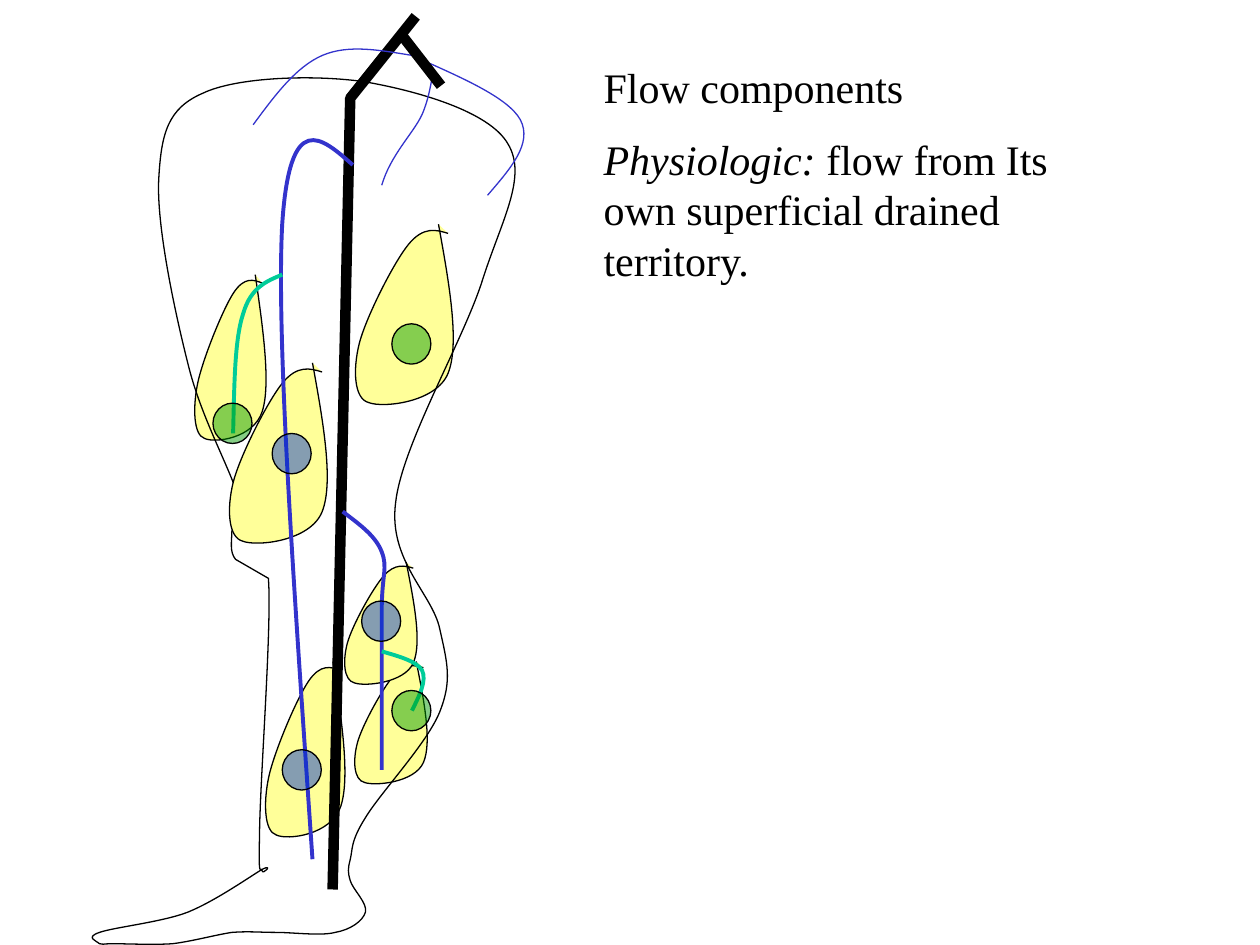
from dataclasses import dataclass

from lxml.etree import SubElement
from pptx import Presentation
from pptx.dml.color import RGBColor
from pptx.enum.shapes import MSO_CONNECTOR, MSO_SHAPE
from pptx.enum.text import MSO_ANCHOR, MSO_AUTO_SIZE, PP_ALIGN
from pptx.oxml.ns import qn
from pptx.util import Inches, Pt


@dataclass(frozen=True)
class Theme:
    font: str = "Times New Roman"
    size: float = 24
    ink: str = "000000"
    zone: str = "FFFF99"
    vein: str = "3333CC"
    branch: str = "00CC99"
    blue_dot: str = "0033CC"
    green_dot: str = "009900"
    dot_alpha: int = 48
    thin: float = 0.75
    medium: float = 2.25
    thick: float = 6


@dataclass(frozen=True)
class Curve:
    start: tuple[float, float]
    segments: list[tuple[float, ...]]
    color: str
    width: float
    fill: str | None = None
    closed: bool = False


@dataclass(frozen=True)
class Zone:
    left: float
    top: float
    width: float
    height: float


@dataclass(frozen=True)
class Dot:
    left: float
    top: float
    color: str


T = Theme()

ZONE_START = (0.8, 0)
ZONE_SEGMENTS = [
    (0.9, 0.32, 1, 0.65, 0.89, 0.81),
    (0.78, 0.97, 0.28, 1, 0.15, 0.97),
    (0.01, 0.95, 0, 0.79, 0.06, 0.65),
    (0.12, 0.51, 0.38, 0.21, 0.52, 0.11),
    (0.66, 0.01, 0.78, 0.03, 0.89, 0.05),
]
BACK_ZONES = [
    Zone(2.8, 5.25, 0.63, 0.99),
    Zone(2.72, 4.46, 0.63, 0.99),
    Zone(1.53, 2.18, 0.62, 1.34),
    Zone(2.8, 1.78, 0.85, 1.46),
]
FRONT_ZONES = [Zone(2.09, 5.25, 0.69, 1.42), Zone(1.8, 2.88, 0.85, 1.46)]

LEG = Curve((2.06, 6.63), [
    (2.06, 6.24, 2.16, 4.96, 2.13, 4.59),
    (1.87, 4.44),
    (1.82, 4.38, 1.84, 4.3, 1.84, 4.22),
    (1.9, 3.98),
    (1.85, 3.76, 1.61, 3.35, 1.5, 2.92),
    (1.39, 2.49, 1.24, 1.79, 1.26, 1.42),
    (1.28, 1.06, 1.33, 0.86, 1.61, 0.74),
    (1.88, 0.61, 2.5, 0.59, 2.9, 0.65),
    (3.3, 0.72, 3.88, 0.88, 4.03, 1.14),
    (4.19, 1.4, 3.98, 1.75, 3.83, 2.22),
    (3.68, 2.7, 3.19, 3.53, 3.14, 3.99),
    (3.08, 4.45, 3.43, 4.71, 3.49, 4.99),
    (3.55, 5.26, 3.59, 5.4, 3.49, 5.65),
    (3.39, 5.9, 3.02, 6.29, 2.9, 6.49),
    (2.78, 6.68, 2.8, 6.74, 2.78, 6.82),
    (2.76, 6.9, 2.76, 6.92, 2.78, 6.99),
    (2.8, 7.06, 2.92, 7.17, 2.9, 7.24),
    (2.88, 7.31, 2.78, 7.38, 2.66, 7.4),
    (2.55, 7.43, 2.33, 7.4, 2.19, 7.4),
    (2.06, 7.4, 1.98, 7.39, 1.84, 7.4),
    (1.71, 7.42, 1.53, 7.47, 1.37, 7.49),
    (1.22, 7.5, 1, 7.49, 0.9, 7.49),
    (0.81, 7.49, 0.81, 7.5, 0.79, 7.49),
    (0.77, 7.47, 0.67, 7.44, 0.79, 7.4),
    (0.9, 7.36, 1.28, 7.32, 1.49, 7.24),
    (1.71, 7.15, 1.98, 6.96, 2.08, 6.9),
    (2.18, 6.85, 2.08, 6.95, 2.08, 6.91),
    (2.07, 6.86, 2.05, 7.02, 2.06, 6.63),
], T.ink, T.thin, closed=True)

VEINS = [
    Curve((3.3, 0.13), [(2.78, 0.78), (2.64, 7.06)], T.ink, T.thick),
    Curve((2.8, 1.31), [(2.55, 1.09, 2.3, 0.86, 2.24, 1.78),
                        (2.19, 2.7, 2.34, 4.76, 2.48, 6.82)], T.vein, T.medium),
    Curve((2.72, 4.06), [(2.85, 4.16, 2.98, 4.25, 3.03, 4.38),
                         (3.08, 4.51, 3.03, 4.56, 3.03, 4.85),
                         (3.03, 5.14, 3.03, 5.63, 3.03, 6.11)], T.vein, T.medium),
    Curve((2.24, 2.18), [(2.12, 2.23, 1.99, 2.28, 1.93, 2.49),
                         (1.86, 2.7, 1.86, 3.07, 1.85, 3.44)], T.branch, T.medium),
    Curve((3.03, 5.17), [(3.17, 5.21, 3.31, 5.25, 3.35, 5.32),
                         (3.39, 5.4, 3.33, 5.52, 3.27, 5.64)], T.branch, T.medium),
    Curve((3.87, 1.55), [(4.05, 1.34, 4.23, 1.14, 4.13, 0.95),
                         (4.03, 0.77, 3.65, 0.61, 3.27, 0.44)], T.vein, T.thin),
    Curve((3.03, 1.47), [(3.1, 1.23, 3.28, 1.06, 3.35, 0.91),
                         (3.41, 0.77, 3.42, 0.65, 3.44, 0.57)], T.vein, T.thin),
    Curve((3.27, 0.44), [(3.02, 0.4, 2.77, 0.35, 2.56, 0.44),
                         (2.35, 0.53, 2.18, 0.76, 2.01, 0.99)], T.vein, T.thin),
]

DOTS = [
    Dot(2.87, 4.77, T.blue_dot), Dot(2.16, 3.44, T.blue_dot), Dot(2.24, 5.95, T.blue_dot),
    Dot(3.11, 5.48, T.green_dot), Dot(1.69, 3.2, T.green_dot), Dot(3.11, 2.57, T.green_dot),
]


def set_line(sp, color: str, width: float) -> None:
    sp.line.color.rgb = RGBColor.from_string(color)
    sp.line.width = Pt(width)


def set_fill(sp, color: str) -> None:
    sp.fill.solid()
    sp.fill.fore_color.rgb = RGBColor.from_string(color)


def pairs(values: tuple[float, ...]) -> list[tuple[float, float]]:
    return list(zip(values[::2], values[1::2]))


def draw_curve(s, curve: Curve) -> None:
    """Draw a freeform, turning each three-point segment into a cubic Bézier."""
    points = [(Inches(x), Inches(y)) for seg in curve.segments for x, y in pairs(seg)]
    builder = s.shapes.build_freeform(*map(Inches, curve.start))
    builder.add_line_segments(points, close=curve.closed)
    sp = builder.convert_to_shape()
    sp.shadow.inherit = False
    set_line(sp, curve.color, curve.width)
    if curve.fill:
        set_fill(sp, curve.fill)
    else:
        sp.fill.background()
    steps = iter(list(sp._element.iter(qn("a:lnTo"))))
    for seg in curve.segments:
        group = [next(steps) for _ in pairs(seg)]
        if len(group) == 3:
            bezier = SubElement(group[0].getparent(), qn("a:cubicBezTo"))
            group[0].addprevious(bezier)
            for step in group:
                bezier.append(step[0])
                step.getparent().remove(step)


def draw_zone(s, zone: Zone) -> None:
    def place(values: tuple[float, ...]) -> tuple[float, ...]:
        return tuple(v for x, y in pairs(values)
                     for v in (zone.left + x * zone.width, zone.top + y * zone.height))

    draw_curve(s, Curve(place(ZONE_START), [place(seg) for seg in ZONE_SEGMENTS],
                        T.ink, T.thin, T.zone))


def draw_dot(s, dot: Dot) -> None:
    sp = s.shapes.add_shape(MSO_SHAPE.OVAL, Inches(dot.left), Inches(dot.top),
                            Inches(0.31), Inches(0.32))
    sp.shadow.inherit = False
    set_fill(sp, dot.color)
    set_line(sp, T.ink, T.thin)
    color = next(sp._element.spPr.iter(qn("a:srgbClr")))
    SubElement(color, qn("a:alpha"), val=str(T.dot_alpha * 1000))


def draw_iliac_branch(s) -> None:
    line = s.shapes.add_connector(MSO_CONNECTOR.STRAIGHT, Inches(3.19), Inches(0.28),
                                  Inches(3.5), Inches(0.68))
    set_line(line, T.ink, T.thick)
    SubElement(line._element.spPr, qn("a:effectLst"))


def fill_text(sp, top: float, height: float, parts: list[tuple[str, bool]]) -> None:
    sp.left, sp.top, sp.width, sp.height = map(Inches, (4.69, top, 3.94, height))
    tf = sp.text_frame
    tf.word_wrap, tf.auto_size, tf.vertical_anchor = True, MSO_AUTO_SIZE.NONE, MSO_ANCHOR.TOP
    p = tf.paragraphs[0]
    p.alignment, p.space_before = PP_ALIGN.LEFT, Pt(0)
    pPr = p._p.get_or_add_pPr()
    pPr.set("marL", "0")
    pPr.set("indent", "0")
    SubElement(pPr, qn("a:buNone"))
    for text, italic in parts:
        r = p.add_run()
        r.text = text
        r.font.name, r.font.size, r.font.italic = T.font, Pt(T.size), italic
        r.font.color.rgb = RGBColor.from_string(T.ink)


def main() -> None:
    prs = Presentation()
    prs.slide_width, prs.slide_height = Inches(10), Inches(7.5)
    s = prs.slides.add_slide(prs.slide_layouts[1])
    fill_text(s.shapes.title, 0.44, 0.5, [("Flow components", False)])
    fill_text(s.placeholders[1], 1.01, 1.33, [
        ("Physiologic:", True), (" flow from Its own superficial drained territory.", False)])
    for zone in BACK_ZONES:
        draw_zone(s, zone)
    draw_curve(s, LEG)
    for zone in FRONT_ZONES:
        draw_zone(s, zone)
    for vein in VEINS:
        draw_curve(s, vein)
    draw_iliac_branch(s)
    for dot in DOTS:
        draw_dot(s, dot)
    prs.save("out.pptx")


if __name__ == "__main__":
    main()
